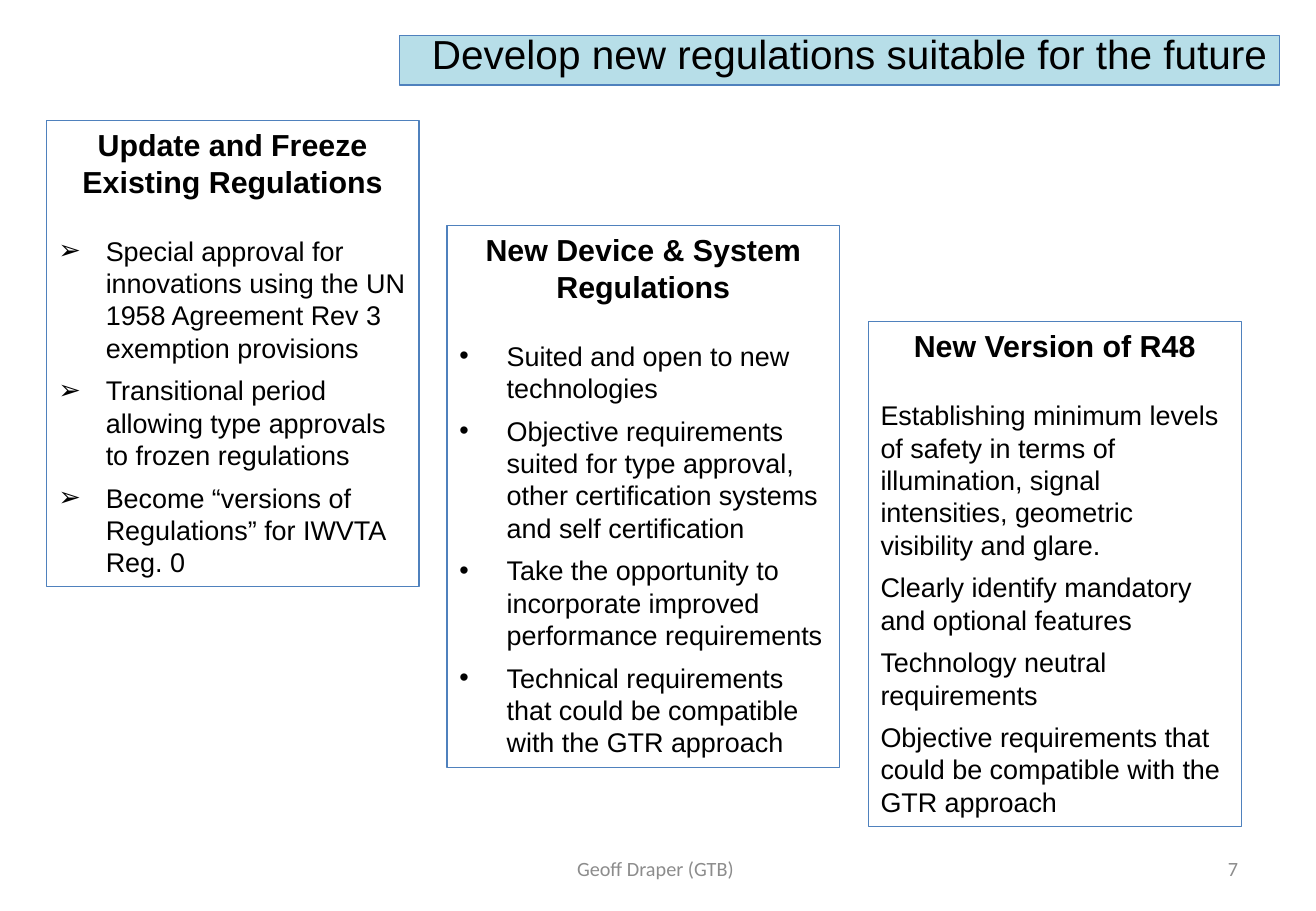
from lxml import etree
from pptx import Presentation
from pptx.dml.color import RGBColor
from pptx.enum import text
from pptx.oxml import ns
from pptx.util import Pt

BLACK = RGBColor(0x00, 0x00, 0x00)
GREY = RGBColor(0x8C, 0x8C, 0x8C)
BLUE = RGBColor(0x4F, 0x81, 0xBD)
PALE_BLUE = RGBColor(0xB7, 0xDE, 0xE8)
LEFT, CENTER, RIGHT = text.PP_ALIGN.LEFT, text.PP_ALIGN.CENTER, text.PP_ALIGN.RIGHT

COMPARISON_LAYOUT = 4
INDENT = 28.08
HEADING_GAP = 20.7

COLUMNS = [
    ((27.4, 71.3, 221, 276.5), "Update and Freeze Existing Regulations", "➢", [
        "Special approval for innovations using the UN 1958 Agreement Rev 3 exemption provisions",
        "Transitional period allowing type approvals to frozen regulations",
        "Become “versions of Regulations” for IWVTA Reg. 0",
    ]),
    ((265, 133.6, 232.6, 321.2), "New Device & System Regulations", "•", [
        "Suited and open to new technologies",
        "Objective requirements suited for type approval, other certification systems "
        "and self certification",
        "Take the opportunity to incorporate improved performance requirements",
        "Technical requirements that could be compatible with the GTR approach",
    ]),
    ((514.7, 190.5, 221, 299.5), "New Version of R48", None, [
        "Establishing minimum levels of safety in terms of illumination, signal "
        "intensities, geometric visibility and glare.",
        "Clearly identify mandatory and optional features",
        "Technology neutral requirements",
        "Objective requirements that could be compatible with the GTR approach",
    ]),
]


class RegulationSlide:
    def __init__(self, deck):
        self.slide = deck.slides.add_slide(deck.slide_layouts[COMPARISON_LAYOUT])
        self.font = "Arial"
        self.footer_font = "Calibri"

    def frame(self, holder, box, anchor=text.MSO_ANCHOR.TOP):
        """Place a text holder and return its text frame."""
        holder.left, holder.top, holder.width, holder.height = map(Pt, box)
        content = holder.text_frame
        content.word_wrap = True
        content.auto_size = text.MSO_AUTO_SIZE.NONE
        content.vertical_anchor = anchor
        return content

    def outline(self, holder):
        holder.line.color.rgb = BLUE
        holder.line.width = Pt(0.75)

    def bullet(self, paragraph, mark):
        """Set a bullet with hanging indent, or none."""
        indent = INDENT if mark else 0
        properties = paragraph._p.get_or_add_pPr()
        properties.set("marL", str(Pt(indent)))
        properties.set("indent", str(Pt(-indent)))
        if mark:
            etree.SubElement(properties, ns.qn("a:buFont"), typeface=self.font)
            etree.SubElement(properties, ns.qn("a:buChar"), char=mark)
        else:
            etree.SubElement(properties, ns.qn("a:buNone"))

    def fill_paragraph(self, paragraph, wording, size, align=LEFT, color=BLACK, bold=False,
                       font=None, spacing=None, after=0, mark=None):
        paragraph.text = wording
        paragraph.alignment = align
        paragraph.line_spacing = Pt(spacing) if spacing else 1.0
        paragraph.space_before = Pt(0)
        paragraph.space_after = Pt(after)
        self.bullet(paragraph, mark)
        style = paragraph.font
        style.name, style.size, style.bold = font or self.font, Pt(size), bold
        style.color.rgb = color

    def title(self, box, wording):
        banner = self.slide.shapes.title
        content = self.frame(banner, box)
        banner.fill.solid()
        banner.fill.fore_color.rgb = PALE_BLUE
        self.outline(banner)
        self.fill_paragraph(content.paragraphs[0], wording, 24, RIGHT, spacing=21.6, after=6)

    def column(self, holder, box, heading, mark, points):
        content = self.frame(holder, box)
        self.outline(holder)
        self.fill_paragraph(content.paragraphs[0], heading, 18, CENTER, bold=True,
                            after=HEADING_GAP)
        for point in points:
            self.fill_paragraph(content.add_paragraph(), point, 16, spacing=19.2, after=6,
                                mark=mark)

    def footer(self, box, wording, align):
        holder = self.slide.shapes.add_textbox(*map(Pt, box))
        content = self.frame(holder, box, text.MSO_ANCHOR.MIDDLE)
        self.fill_paragraph(content.paragraphs[0], wording, 12, align, GREY,
                            font=self.footer_font)


def main():
    deck = Presentation()
    deck.slide_width, deck.slide_height = Pt(780), Pt(540)
    page = RegulationSlide(deck)

    page.title((236.9, 20.9, 521.3, 29.5), "Develop new regulations suitable for the future")
    *bodies, spare = list(page.slide.placeholders)[1:]
    spare.element.getparent().remove(spare.element)
    for body, column in zip(bodies, COLUMNS):
        page.column(body, *column)

    page.footer((266.4, 500.4, 247, 28.8), "Geoff Draper (GTB) ", CENTER)
    page.footer((558.7, 500.4, 182.2, 28.8), "7", RIGHT)
    deck.save("out.pptx")


if __name__ == "__main__":
    main()
